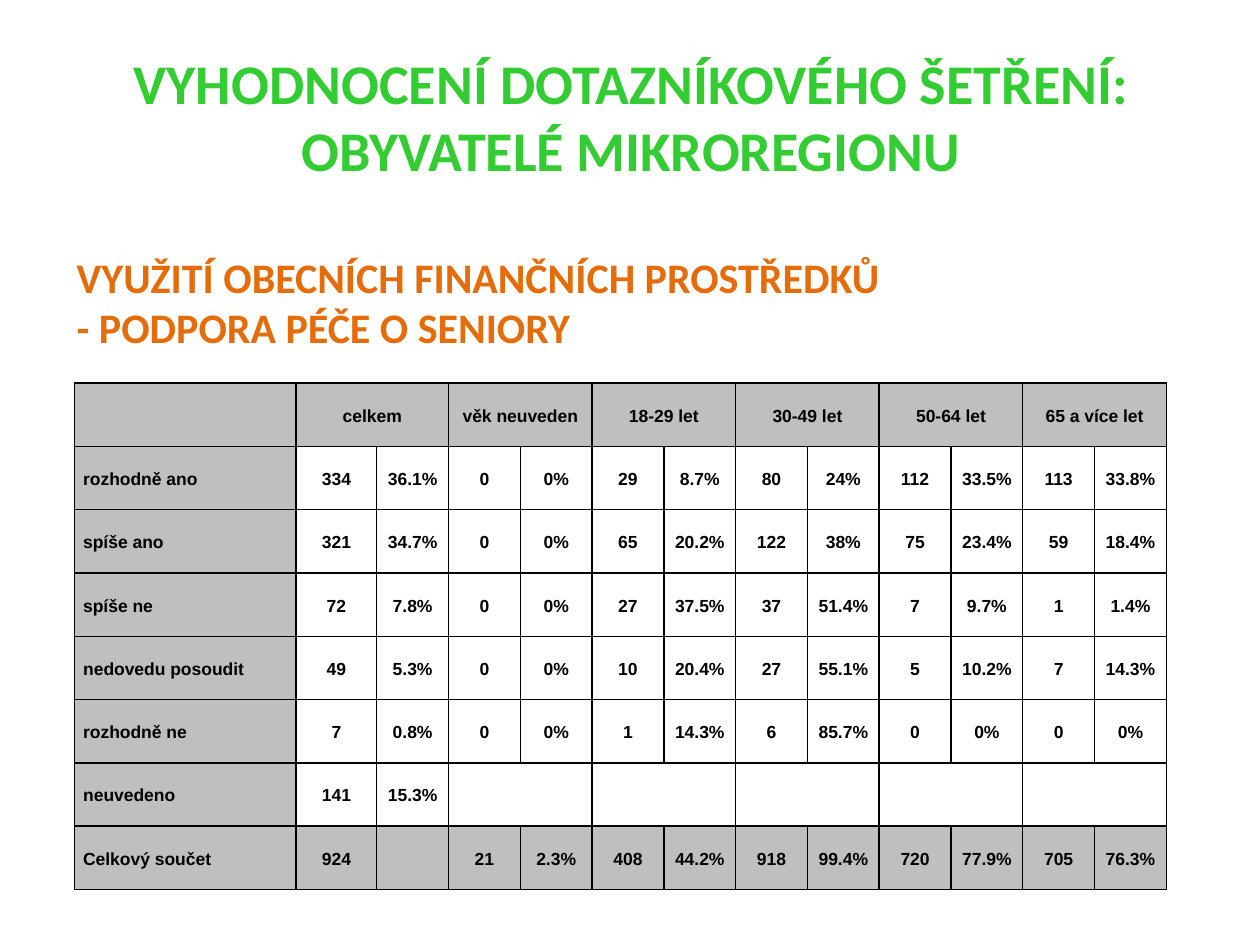
from lxml import etree
from pptx import Presentation
from pptx.dml.color import RGBColor
from pptx.enum.text import MSO_ANCHOR, MSO_AUTO_SIZE, PP_ALIGN
from pptx.oxml.ns import qn
from pptx.util import Inches, Pt

MIDDLE = MSO_ANCHOR.MIDDLE
NO_AUTOFIT = MSO_AUTO_SIZE.NONE
LEFT, CENTER = PP_ALIGN.LEFT, PP_ALIGN.CENTER

GREEN = RGBColor(0x33, 0xCC, 0x33)
ORANGE = RGBColor(0xE4, 0x6C, 0x0A)
GREY = RGBColor(0xBF, 0xBF, 0xBF)
BLACK = RGBColor(0, 0, 0)

TITLE = "VYHODNOCENÍ DOTAZNÍKOVÉHO ŠETŘENÍ:\vOBYVATELÉ MIKROREGIONU"
SUBTITLE = "VYUŽITÍ OBECNÍCH FINANČNÍCH PROSTŘEDKŮ\n- PODPORA PÉČE O SENIORY"
GROUPS = ["celkem", "věk neuveden", "18-29 let", "30-49 let", "50-64 let", "65 a více let"]
ANSWERS = [
    ("rozhodně ano", "334", "36.1%", "0", "0%", "29", "8.7%", "80", "24%", "112", "33.5%", "113", "33.8%"),
    ("spíše ano", "321", "34.7%", "0", "0%", "65", "20.2%", "122", "38%", "75", "23.4%", "59", "18.4%"),
    ("spíše ne", "72", "7.8%", "0", "0%", "27", "37.5%", "37", "51.4%", "7", "9.7%", "1", "1.4%"),
    ("nedovedu posoudit", "49", "5.3%", "0", "0%", "10", "20.4%", "27", "55.1%", "5", "10.2%", "7", "14.3%"),
    ("rozhodně ne", "7", "0.8%", "0", "0%", "1", "14.3%", "6", "85.7%", "0", "0%", "0", "0%"),
    ("neuvedeno", "141", "15.3%") + ("",) * 10,
    ("Celkový součet", "924", "", "21", "2.3%", "408", "44.2%", "918", "99.4%", "720", "77.9%", "705", "76.3%"),
]
HEADER = ("",) + tuple(text for group in GROUPS for text in (group, ""))
ROWS = [HEADER] + ANSWERS
COLUMN_WIDTHS = [1.76, 0.64] + [0.57] * 11
ROW_HEIGHT = 4.02 / len(ROWS)
UNSTATED_ROW = len(ROWS) - 2
TOTAL_ROW = len(ROWS) - 1


def style_text(frame, font_name, size, color, align, spacing=1.0):
    for para in frame.paragraphs:
        para.alignment = align
        para.line_spacing = spacing
        for font in [para.font] + [span.font for span in para.runs]:
            font.name = font_name
            font.size = Pt(size)
            font.bold = True
            font.color.rgb = color


def add_borders(cell):
    properties = cell._tc.get_or_add_tcPr()
    for side in ("lnL", "lnR", "lnT", "lnB"):
        line = etree.SubElement(properties, qn(f"a:{side}"), w=str(Pt(1)))
        fill = etree.SubElement(line, qn("a:solidFill"))
        etree.SubElement(fill, qn("a:srgbClr"), val=str(BLACK))


def fill_cell(cell, text, row, column):
    cell.text = text
    cell.vertical_anchor = MIDDLE
    cell.margin_left = cell.margin_right = Inches(0.07)
    cell.margin_top = cell.margin_bottom = 0
    align = CENTER if column else LEFT
    style_text(cell.text_frame, "Arial", 10, BLACK, align, 1.15)
    add_borders(cell)
    if column == 0 or row in (0, TOTAL_ROW):
        cell.fill.solid()
        cell.fill.fore_color.rgb = GREY
    else:
        cell.fill.background()


def add_answer_table(page):
    frame = page.shapes.add_table(
        len(ROWS), len(COLUMN_WIDTHS), Inches(0.59), Inches(3.04),
        Inches(sum(COLUMN_WIDTHS)), Inches(ROW_HEIGHT * len(ROWS)))
    table = frame.table
    table.first_row = table.horz_banding = False
    for column, width in zip(table.columns, COLUMN_WIDTHS):
        column.width = Inches(width)
    for row_index, texts in enumerate(ROWS):
        table.rows[row_index].height = Inches(ROW_HEIGHT)
        for column_index, text in enumerate(texts):
            fill_cell(table.cell(row_index, column_index), text, row_index, column_index)
    for row_index, first_column in ((0, 1), (UNSTATED_ROW, 3)):
        for column_index in range(first_column, len(COLUMN_WIDTHS), 2):
            table.cell(row_index, column_index).merge(table.cell(row_index, column_index + 1))


def main():
    deck = Presentation()
    deck.slide_width, deck.slide_height = Inches(10), Inches(7.5)
    page = deck.slides.add_slide(deck.slide_layouts[5])

    title = page.shapes.title
    title.left, title.top = Inches(0.51), Inches(0.29)
    title.width, title.height = Inches(9), Inches(1.25)
    subtitle = page.shapes.add_textbox(Inches(0.51), Inches(1.94), Inches(8.82), Inches(0.91))

    for box, text, size, color, align in (
            (title, TITLE, 32, GREEN, CENTER), (subtitle, SUBTITLE, 24, ORANGE, LEFT)):
        frame = box.text_frame
        frame.text = text
        frame.word_wrap = True
        frame.auto_size = NO_AUTOFIT
        frame.vertical_anchor = MIDDLE
        style_text(frame, "Calibri", size, color, align)

    add_answer_table(page)
    deck.save("out.pptx")


if __name__ == "__main__":
    main()
